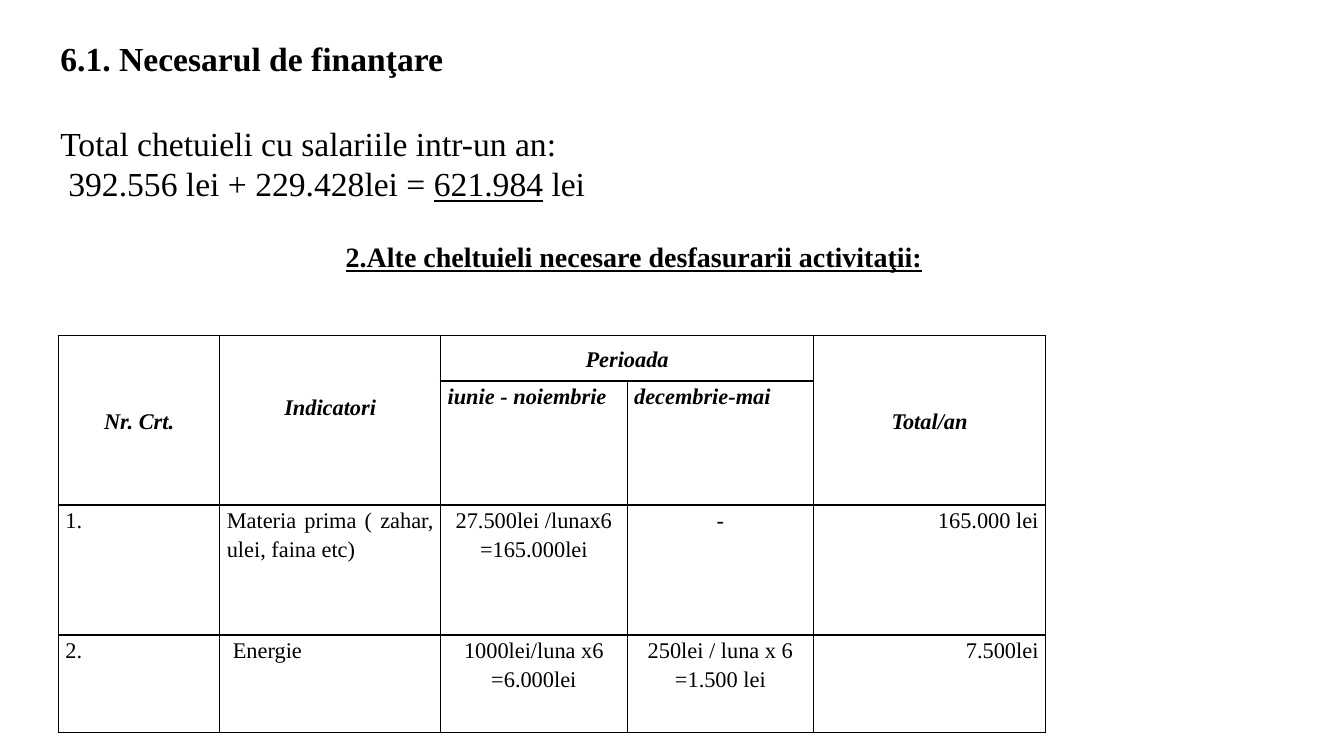
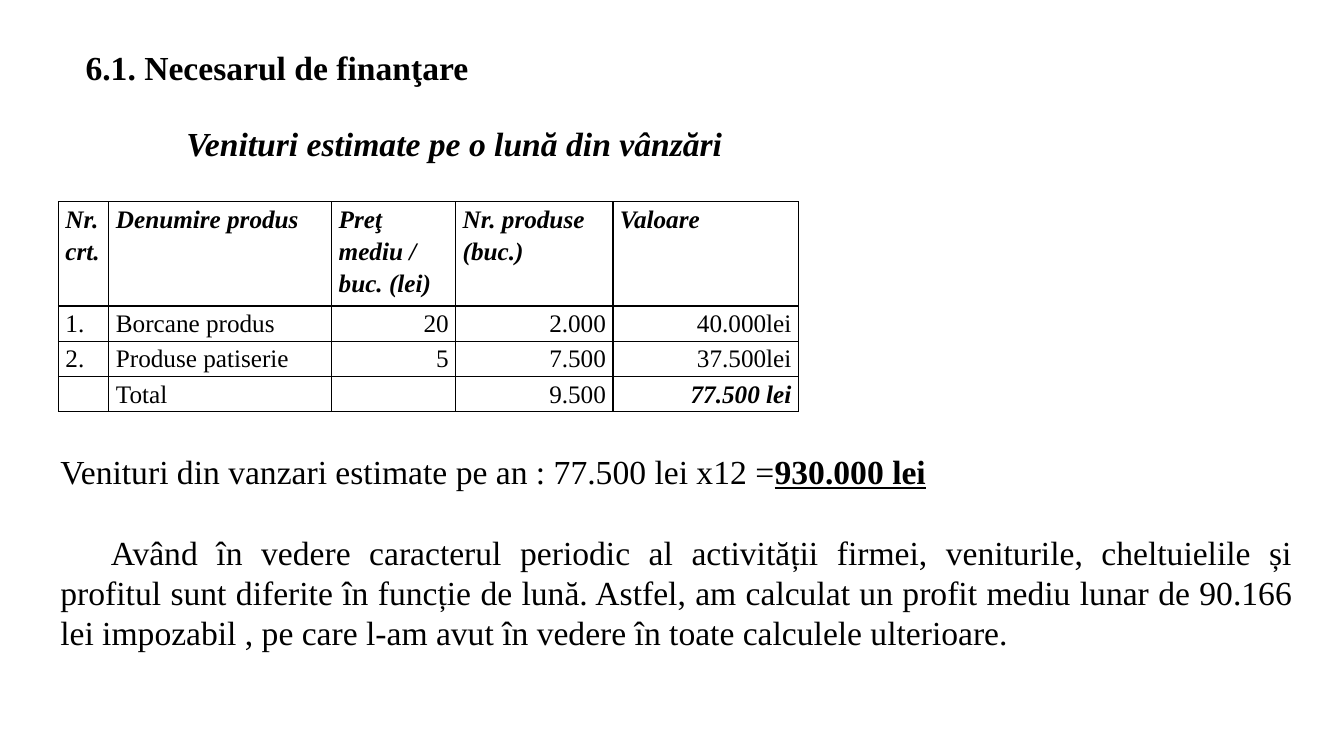
from dataclasses import dataclass

from lxml.etree import SubElement
from pptx import Presentation
from pptx.dml.color import RGBColor
from pptx.enum.text import MSO_ANCHOR, MSO_AUTO_SIZE, PP_ALIGN
from pptx.oxml.ns import qn
from pptx.slide import Slide
from pptx.table import _Cell
from pptx.text.text import TextFrame, _Paragraph
from pptx.util import Emu, Pt

EMU_PER_PX = 9144
BLACK = RGBColor(0x00, 0x00, 0x00)
FONT = "Times New Roman"
BODY_SIZE = 24
BORDER_EMU = 12700
CELL_INSET = 7
TITLE = "6.1. Necesarul de finanţare"


@dataclass(frozen=True)
class Span:
    text: str
    bold: bool = False
    italic: bool = False
    underline: bool = False


@dataclass(frozen=True)
class Para:
    spans: tuple[Span, ...]
    align: PP_ALIGN = PP_ALIGN.LEFT
    first_indent: int = 0
    space_before: int = 0


@dataclass(frozen=True)
class Entry:
    lines: tuple[str, ...] = ()
    align: PP_ALIGN = PP_ALIGN.LEFT
    strong: bool = False
    middle: bool = False
    lift: int = 0
    first_indent: int = 0


@dataclass(frozen=True)
class Merge:
    row: int
    column: int
    last_row: int
    last_column: int


@dataclass(frozen=True)
class Grid:
    left: int
    top: int
    columns: tuple[int, ...]
    rows: tuple[int, ...]
    size: int
    entries: tuple[tuple[Entry, ...], ...]
    merges: tuple[Merge, ...] = ()


def px(length: int) -> Emu:
    return Emu(length * EMU_PER_PX)


def add_span(para: _Paragraph, text: str, *, size: int, bold: bool = False,
             italic: bool = False, underline: bool = False) -> None:
    span = para.add_run()
    span.text = text
    font = span.font
    font.name, font.size = FONT, Pt(size)
    font.bold, font.italic, font.underline = bold, italic, underline
    font.color.rgb = BLACK


def write(frame: TextFrame, paras: tuple[Para, ...], size: int,
          line_spacing: float = 1.0) -> None:
    for index, item in enumerate(paras):
        para = frame.add_paragraph() if index else frame.paragraphs[0]
        para.alignment = item.align
        para.line_spacing = line_spacing
        if item.space_before:
            para.space_before = Pt(item.space_before)
        if item.first_indent:
            properties = para._p.get_or_add_pPr()
            properties.set("marL", "0")
            properties.set("indent", str(px(item.first_indent)))
        for span in item.spans:
            add_span(para, span.text, size=size, bold=span.bold,
                     italic=span.italic, underline=span.underline)


def add_text(page: Slide, left: int, top: int, width: int, height: int,
             *paras: Para, size: int = BODY_SIZE, wrap: bool = False) -> None:
    box = page.shapes.add_textbox(px(left), px(top), px(width), px(height))
    frame = box.text_frame
    frame.word_wrap = wrap
    frame.auto_size = MSO_AUTO_SIZE.SHAPE_TO_FIT_TEXT
    write(frame, paras, size)


def add_title(page: Slide, left: int, top: int) -> None:
    add_text(page, left, top, 404, 50, Para((Span(TITLE, bold=True),)))


def set_borders(cell: _Cell) -> None:
    properties = cell._tc.get_or_add_tcPr()
    for index, side in enumerate(("lnL", "lnR", "lnT", "lnB")):
        line = SubElement(properties, qn(f"a:{side}"), w=str(BORDER_EMU))
        fill = SubElement(line, qn("a:solidFill"))
        SubElement(fill, qn("a:srgbClr"), val=str(BLACK))
        properties.insert(index, line)


def fill_cell(cell: _Cell, entry: Entry, size: int) -> None:
    cell.margin_left = cell.margin_right = px(CELL_INSET)
    cell.margin_top, cell.margin_bottom = px(0), px(entry.lift)
    cell.vertical_anchor = MSO_ANCHOR.MIDDLE if entry.middle else MSO_ANCHOR.TOP
    cell.fill.background()
    set_borders(cell)
    paras = tuple(
        Para((Span(line, bold=entry.strong, italic=entry.strong),),
             entry.align, entry.first_indent)
        for line in entry.lines)
    write(cell.text_frame, paras, size, 1.15)


def add_grid(page: Slide, grid: Grid) -> None:
    table = page.shapes.add_table(
        len(grid.rows), len(grid.columns), px(grid.left), px(grid.top),
        px(sum(grid.columns)), px(sum(grid.rows))).table
    table.first_row = table.horz_banding = False
    for column, width in zip(table.columns, grid.columns):
        column.width = px(width)
    for row, height in zip(table.rows, grid.rows):
        row.height = px(height)
    for row, entries in enumerate(grid.entries):
        for column, entry in enumerate(entries):
            fill_cell(table.cell(row, column), entry, grid.size)
    for merge in grid.merges:
        table.cell(merge.row, merge.column).merge(
            table.cell(merge.last_row, merge.last_column))


def heading(text: str) -> Entry:
    return Entry((text,), strong=True)


def centred_heading(text: str, lift: int = 0) -> Entry:
    return Entry((text,), PP_ALIGN.CENTER, strong=True, middle=True, lift=lift)


def label(text: str) -> Entry:
    return Entry((text,))


def centred(*lines: str) -> Entry:
    return Entry(lines, PP_ALIGN.CENTER)


def amount(text: str, strong: bool = False) -> Entry:
    return Entry((text,), PP_ALIGN.RIGHT, strong)


EXPENSES = Grid(
    58, 333, (160, 219, 185, 185, 230), (45, 123, 129, 97), 16,
    (
        (centred_heading("Nr. Crt."), centred_heading("Indicatori", lift=29),
         centred_heading("Perioada"), Entry(), centred_heading("Total/an")),
        (Entry(), Entry(), heading("iunie - noiembrie"),
         heading("decembrie-mai"), Entry()),
        (label("1."),
         Entry(("Materia prima ( zahar, ulei, faina etc)",), PP_ALIGN.JUSTIFY),
         centred("27.500lei /lunax6", "=165.000lei"), centred("-"),
         amount("165.000 lei")),
        (label("2."), Entry(("Energie",), first_indent=6),
         centred("1000lei/luna x6", "=6.000lei"),
         centred("250lei / luna x 6", "=1.500 lei"), amount("7.500lei")),
    ),
    (Merge(0, 0, 1, 0), Merge(0, 1, 1, 1), Merge(0, 2, 0, 3), Merge(0, 4, 1, 4)),
)

REVENUES = Grid(
    58, 200, (50, 221, 123, 156, 184), (103, 35, 35, 35), 18,
    (
        tuple(heading(text) for text in (
            "Nr. crt.", "Denumire produs", "Preţ mediu / buc. (lei)",
            "Nr. produse (buc.)", "Valoare")),
        (label("1."), label("Borcane produs"), amount("20"), amount("2.000"),
         amount("40.000lei")),
        (label("2."), label("Produse patiserie"), amount("5"), amount("7.500"),
         amount("37.500lei")),
        (Entry(), label("Total"), Entry(), amount("9.500"),
         amount("77.500 lei", strong=True)),
    ),
)


def build_expenses(page: Slide) -> None:
    add_title(page, 50, 33)
    add_text(
        page, 50, 117, 666, 91,
        Para((Span("Total chetuieli cu salariile intr-un an:"),)),
        Para((Span("392.556 lei + 229.428lei = "),
              Span("621.984", underline=True), Span(" lei")), first_indent=8),
        wrap=True)
    add_text(
        page, 333, 233, 596, 44,
        Para((Span("2.Alte cheltuieli necesare desfasurarii activitaţii:",
                   bold=True, underline=True),)),
        size=20)
    add_grid(page, EXPENSES)


def build_revenues(page: Slide) -> None:
    add_title(page, 75, 42)
    add_text(
        page, 175, 117, 557, 50,
        Para((Span("Venituri estimate pe o lună din vânzări",
                   bold=True, italic=True),)))
    add_grid(page, REVENUES)
    add_text(
        page, 50, 442, 1242, 212,
        Para((Span("Venituri din vanzari estimate pe an : 77.500 lei x12 ="),
              Span("930.000 lei", bold=True, underline=True))),
        Para((Span("Având în vedere caracterul periodic al activității firmei, "
                   "veniturile, cheltuielile și profitul sunt diferite în funcție "
                   "de lună. Astfel, am calculat un profit mediu lunar de 90.166 "
                   "lei impozabil , pe care l-am avut în vedere în toate "
                   "calculele ulterioare."),),
             PP_ALIGN.JUSTIFY, first_indent=50, space_before=29),
        wrap=True)


def main() -> None:
    deck = Presentation()
    deck.slide_width, deck.slide_height = px(1333), px(750)
    for build in (build_expenses, build_revenues):
        build(deck.slides.add_slide(deck.slide_layouts[6]))
    deck.save("out.pptx")


if __name__ == "__main__":
    main()
